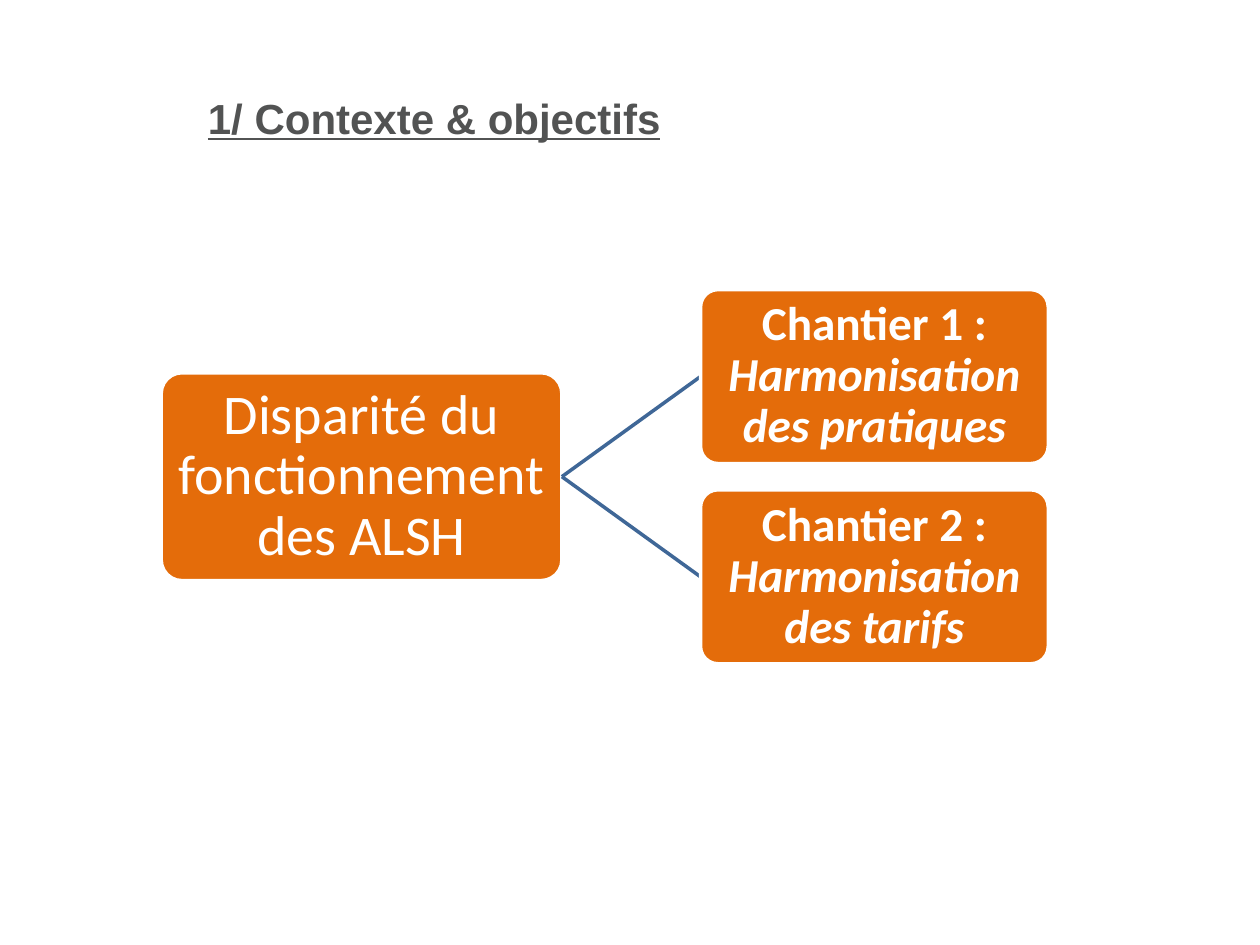
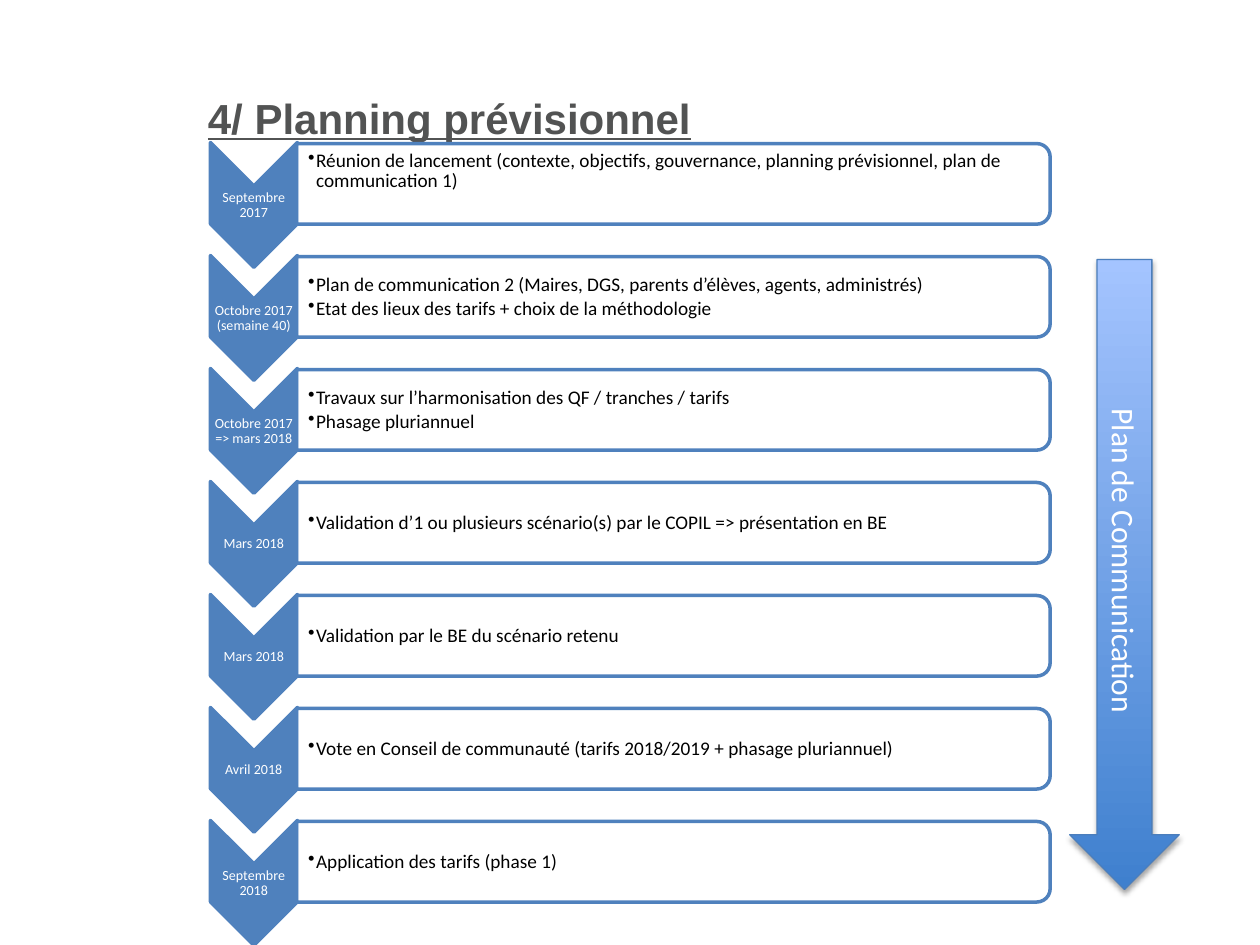
from lxml import etree
from pptx import Presentation
from pptx.dml.color import RGBColor
from pptx.enum.shapes import MSO_CONNECTOR, MSO_SHAPE
from pptx.enum.text import MSO_ANCHOR, MSO_AUTO_SIZE, PP_ALIGN
from pptx.oxml.ns import qn
from pptx.util import Pt

ORANGE = RGBColor(0xE4, 0x6C, 0x0A)
BLUE = RGBColor(0x4F, 0x81, 0xBD)
LINK_BLUE = RGBColor(0x3F, 0x67, 0x97)
ARROW_EDGE = RGBColor(0x4B, 0x7E, 0xBC)
ARROW_DARK = RGBColor(0x3F, 0x80, 0xCE)
ARROW_LIGHT = RGBColor(0xA4, 0xC4, 0xFF)
TITLE_GREY = RGBColor(0x52, 0x53, 0x53)
WHITE = RGBColor(0xFF, 0xFF, 0xFF)
BLACK = RGBColor(0, 0, 0)

STRAIGHT = MSO_CONNECTOR.STRAIGHT
ROUND_RECT = MSO_SHAPE.ROUNDED_RECTANGLE
ROUND_TOP = MSO_SHAPE.ROUND_2_SAME_RECTANGLE
CHEVRON = MSO_SHAPE.CHEVRON
DOWN_ARROW = MSO_SHAPE.DOWN_ARROW
MIDDLE = MSO_ANCHOR.MIDDLE
NO_AUTOFIT = MSO_AUTO_SIZE.NONE
LEFT, CENTER = PP_ALIGN.LEFT, PP_ALIGN.CENTER

TITLE_ONLY = 5
TITLE_FONT, BODY_FONT = "Arial", "Calibri"

STEPS = [
    ("Septembre 2017",
     ["Réunion de lancement (contexte, objectifs, gouvernance, planning "
      "prévisionnel, plan de communication 1)"]),
    ("Octobre 2017 (semaine 40)",
     ["Plan de communication 2 (Maires, DGS, parents d’élèves, agents, administrés)",
      "Etat des lieux des tarifs + choix de la méthodologie"]),
    ("Octobre 2017 => mars 2018",
     ["Travaux sur l’harmonisation des QF / tranches / tarifs",
      "Phasage pluriannuel"]),
    ("Mars 2018",
     ["Validation d’1 ou plusieurs scénario(s) par le COPIL => présentation en BE"]),
    ("Mars 2018", ["Validation par le BE du scénario retenu"]),
    ("Avril 2018",
     ["Vote en Conseil de communauté (tarifs 2018/2019 + phasage pluriannuel)"]),
    ("Septembre 2018", ["Application des tarifs (phase 1)"]),
]


def add_xml(parent, tag, **attributes):
    return etree.SubElement(parent, qn(tag), attributes)


class Deck:
    """Holds the presentation, its style and the slide being filled."""

    def __init__(self):
        self.prs = Presentation()
        self.prs.slide_width, self.prs.slide_height = Pt(720), Pt(540)
        self.slide = None

    def new_slide(self, heading):
        self.slide = self.prs.slides.add_slide(self.prs.slide_layouts[TITLE_ONLY])
        title = self.slide.shapes.title
        title.left, title.top, title.width, title.height = Pt(111.6), Pt(41), Pt(562.3), Pt(52.6)
        frame = title.text_frame
        frame.text = heading
        frame.auto_size = NO_AUTOFIT
        frame.vertical_anchor = MIDDLE
        line = frame.paragraphs[0]
        line.alignment = LEFT
        self.style(line, 24, TITLE_GREY, TITLE_FONT)
        line.font.bold = line.font.underline = True

    def style(self, paragraph, size, color, name=BODY_FONT):
        font = paragraph.font
        font.name, font.size, font.color.rgb = name, Pt(size), color

    def shape(self, kind, center_x, center_y, width, height, fill, line, line_width=2, turn=0):
        """Add a preset shape by its centre; width and height are before turning."""
        shape = self.slide.shapes.add_shape(
            kind, Pt(center_x - width / 2), Pt(center_y - height / 2), Pt(width), Pt(height))
        shape.rotation = turn
        shape.shadow.inherit = False
        if fill is not None:
            shape.fill.solid()
            shape.fill.fore_color.rgb = fill
        shape.line.color.rgb = line
        shape.line.width = Pt(line_width)
        return shape

    def fill_text(self, frame, paragraphs, size, color=WHITE, inset=1, bulleted=False):
        """Fill a frame; each paragraph is a list of its runs."""
        frame.word_wrap = True
        frame.vertical_anchor = MIDDLE
        frame.margin_left = frame.margin_right = Pt(inset)
        frame.margin_top = frame.margin_bottom = Pt(inset)
        for index, runs in enumerate(paragraphs):
            paragraph = frame.add_paragraph() if index else frame.paragraphs[0]
            for text in runs:
                paragraph.add_run().text = text
            paragraph.alignment = LEFT if bulleted else CENTER
            paragraph.line_spacing = 0.9
            if bulleted:
                paragraph.space_after = Pt(1.65)
                self.bullet(paragraph)
            self.style(paragraph, size, color)

    def bullet(self, paragraph):
        properties = paragraph._p.get_or_add_pPr()
        properties.set("marL", str(Pt(4.5)))
        properties.set("indent", str(Pt(-4.5)))
        add_xml(properties, "a:buChar", char="•")

    def text_box(self, left, center_y, width, height, paragraphs, size, **options):
        box = self.slide.shapes.add_textbox(
            Pt(left), Pt(center_y - height / 2), Pt(width), Pt(height))
        self.fill_text(box.text_frame, paragraphs, size, **options)
        return box.text_frame

    def topic(self, center_x, center_y, width, height, runs, size):
        box = self.shape(ROUND_RECT, center_x, center_y, width, height, ORANGE, WHITE)
        box.adjustments[0] = 0.1
        self.fill_text(box.text_frame, [runs], size, inset=1.5)
        return box.text_frame.paragraphs[0]

    def link(self, start, end):
        line = self.slide.shapes.add_connector(STRAIGHT, *map(Pt, start + end))
        line.line.color.rgb = LINK_BLUE
        line.line.width = Pt(2)
        add_xml(line.element.spPr, "a:effectLst")

    def step(self, center_y, date, actions):
        self.shape(CHEVRON, 145.1, center_y + 12, 71.3, 49.7, BLUE, BLUE, turn=90)
        self.text_box(120.2, center_y + 12.3, 49.7, 21.6, [[date]], 8, inset=0.5)
        panel = self.shape(ROUND_TOP, 384.8, center_y, 46.1, 430.6, WHITE, BLUE, turn=90)
        fill_color = panel.element.spPr.find(qn("a:solidFill"))[0]
        add_xml(fill_color, "a:alpha", val="90000")
        frame = self.text_box(169.9, center_y, 427.7, 41.8, [[action] for action in actions],
                              11, color=BLACK, bulleted=True)
        frame.margin_left = Pt(6.2)
        return frame

    def down_arrow(self, center_x, center_y, width, height, label):
        arrow = self.shape(DOWN_ARROW, center_x, center_y, width, height, None, ARROW_EDGE, 0.75)
        arrow.fill.gradient()
        arrow.fill.gradient_angle = 90
        for stop, color in zip(arrow.fill.gradient_stops, (ARROW_DARK, ARROW_LIGHT)):
            stop.color.rgb = color
        effects = arrow.element.spPr.find(qn("a:effectLst"))
        shadow = add_xml(effects, "a:outerShdw", blurRad=str(Pt(3.1)), dist=str(Pt(1.8)),
                         dir="5400000", rotWithShape="0")
        shade = add_xml(shadow, "a:srgbClr", val=str(BLACK))
        add_xml(shade, "a:alpha", val="35000")
        arrow.element.txBody.bodyPr.set("vert", "vert")
        self.fill_text(arrow.text_frame, [[label]], 18, inset=3.6)
        arrow.text_frame.paragraphs[0].line_spacing = 1.0


def context_slide(deck):
    deck.new_slide("1/ Contexte & objectifs")
    root_y = 272.4
    deck.topic(206.6, root_y, 229, 118.8, ["Disparité du fonctionnement des ALSH"], 32)
    projects = [("Chantier 1 : ", "Harmonisation des pratiques"),
                ("Chantier 2 : ", "Harmonisation des tarifs")]
    for side, runs in zip((-1, 1), projects):
        project_y = root_y + side * 57.2
        deck.link((321.1, root_y), (400.3, project_y))
        project = deck.topic(499.7, project_y, 198.7, 99.4, runs, 27)
        project.font.bold = True
        project.runs[1].font.italic = True


def planning_slide(deck):
    deck.new_slide("4/ Planning prévisionnel")
    frames = [deck.step(105.1 + 64.56 * row, date, actions)
              for row, (date, actions) in enumerate(STEPS)]
    frames[0].margin_bottom = Pt(15.5)
    deck.down_arrow(642.6, 328.3, 62.6, 360, "Plan de Communication")


def main():
    deck = Deck()
    context_slide(deck)
    planning_slide(deck)
    deck.prs.save("out.pptx")


if __name__ == "__main__":
    main()
